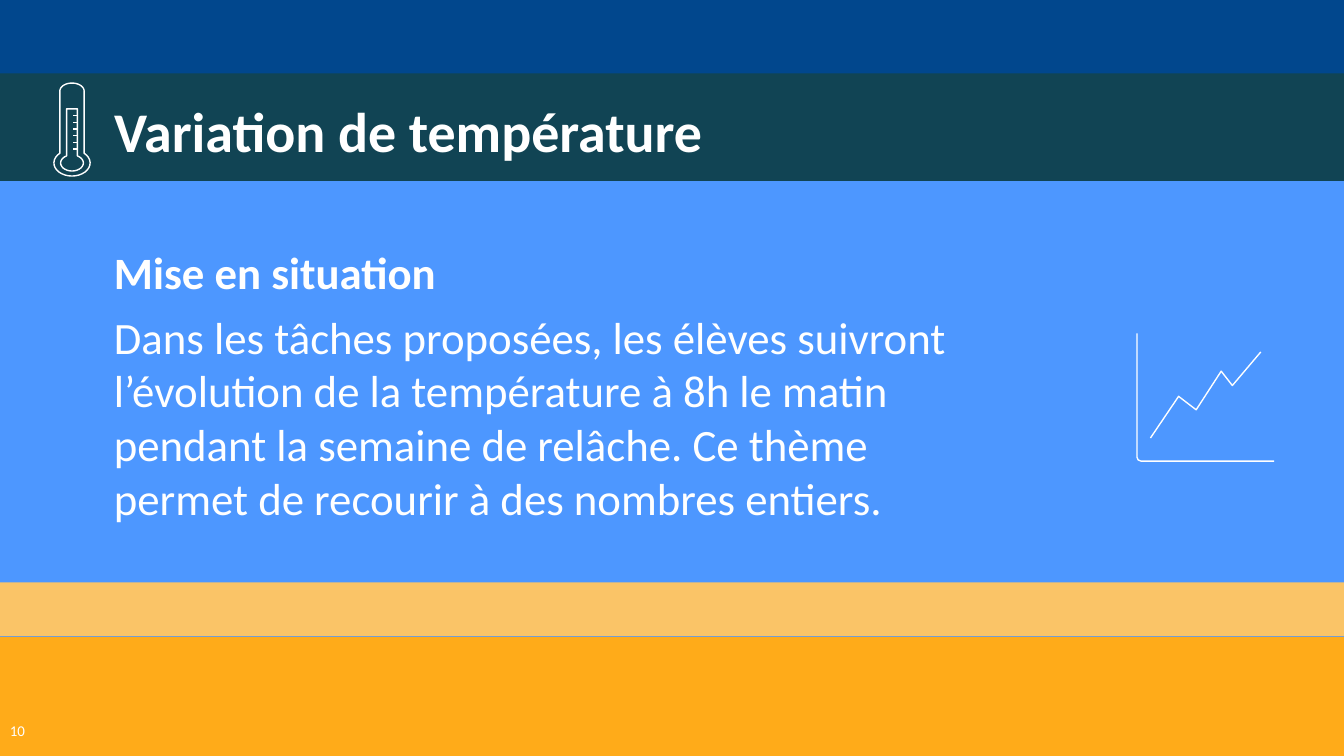
from math import acos, cos, pi, sin

from pptx import Presentation
from pptx.dml.color import RGBColor
from pptx.enum.shapes import MSO_CONNECTOR, MSO_SHAPE
from pptx.enum.text import MSO_ANCHOR as ANCHOR, MSO_AUTO_SIZE, PP_ALIGN as ALIGN
from pptx.oxml.ns import qn
from pptx.util import Pt

WIDTH, HEIGHT = 720, 405


def rgb(value):
    return RGBColor.from_string(value)


def arc(cx, cy, rx, ry, start, end, steps=24):
    """Points on an ellipse, from one angle to another, y pointing down."""
    angles = [start + (end - start) * i / steps for i in range(steps + 1)]
    return [(cx + rx * cos(a), cy + ry * sin(a)) for a in angles]


def bulb(cx, cy, rx, ry, half_neck):
    """Ellipse open at the top, running clockwise from the right of its neck."""
    neck = acos(half_neck / rx)
    return arc(cx, cy, rx, ry, -neck, pi + neck)


class SlideBuilder:
    font = "Calibri"
    ink = "FFFFFF"
    line_width = 0.75
    inset = 7.2

    def __init__(self, slide):
        self.slide = slide

    def background(self, color):
        fill = self.slide.background.fill
        fill.solid()
        fill.fore_color.rgb = rgb(color)

    def band(self, top, height, color):
        sp = self.slide.shapes.add_shape(
            MSO_SHAPE.RECTANGLE, 0, Pt(top), Pt(WIDTH), Pt(height))
        sp.shadow.inherit = False
        sp.fill.solid()
        sp.fill.fore_color.rgb = rgb(color)
        sp.line.fill.background()

    def fill_text(self, sp, paragraphs, size, anchor, align=ALIGN.LEFT, before=0):
        """Fill a shape with (text, bold) paragraphs."""
        tf = sp.text_frame
        frame = {"word_wrap": True, "auto_size": MSO_AUTO_SIZE.NONE,
                 "vertical_anchor": anchor}
        frame.update({f"margin_{side}": Pt(self.inset)
                      for side in ("left", "top", "right", "bottom")})
        for name, value in frame.items():
            setattr(tf, name, value)
        for i, (text, bold) in enumerate(paragraphs):
            p = tf.add_paragraph() if i else tf.paragraphs[0]
            p.alignment, p.space_before = align, Pt(before)
            r = p.add_run()
            r.text = text
            for name, value in {"name": self.font, "size": Pt(size), "bold": bold}.items():
                setattr(r.font, name, value)
            r.font.color.rgb = rgb(self.ink)

    def title(self, text, left, top, width, height, size):
        sp = self.slide.shapes.title
        sp.left, sp.top, sp.width, sp.height = map(Pt, (left, top, width, height))
        self.slide.shapes._spTree.append(sp._element)  # in front of the bands
        self.fill_text(sp, [(text, True)], size, ANCHOR.MIDDLE)

    def text(self, paragraphs, left, top, width, height, size, **layout):
        sp = self.slide.shapes.add_textbox(*map(Pt, (left, top, width, height)))
        self.fill_text(sp, paragraphs, size, **layout)

    def group(self):
        return self.slide.shapes.add_group_shape()

    def stroke(self, sp):
        sp.line.color.rgb = rgb(self.ink)
        sp.line.width = Pt(self.line_width)

    def outline(self, group, points, close=False):
        start, *rest = [(Pt(x), Pt(y)) for x, y in points]
        builder = group.shapes.build_freeform(*start)
        builder.add_line_segments(rest, close=close)
        sp = builder.convert_to_shape()
        sp.shadow.inherit = False
        sp.fill.background()
        self.stroke(sp)

    def line(self, group, x1, y1, x2, y2):
        sp = group.shapes.add_connector(
            MSO_CONNECTOR.STRAIGHT, *map(Pt, (x1, y1, x2, y2)))
        self.stroke(sp)
        sp._element.spPr.append(sp._element.makeelement(qn("a:effectLst"), {}))


def draw_chart_icon(b):
    icon = b.group()
    b.outline(icon, [(609.1, 178.6), (609.1, 245), (609.7, 246.4),
                     (611.2, 247), (682.6, 247)])
    b.outline(icon, [(616.3, 234.7), (631.4, 212.4), (640.8, 219.6),
                     (654.2, 198.9), (660.2, 206.6), (675.4, 188.6)])


def draw_thermometer_icon(b):
    icon = b.group()
    cx, bulb_y = 38.6, 87.3
    tube, column = 6.5, 2.9
    b.outline(icon, bulb(cx, bulb_y, 9.7, 7, tube)
              + arc(cx, 48.8, tube, 4.3, pi, 2 * pi), close=True)
    b.outline(icon, bulb(cx, bulb_y, 6.1, 4.3, column)
              + [(cx - column, 58.3), (cx + column, 58.3)], close=True)
    for i in range(6):
        y = 61.9 + 3.6 * i
        b.line(icon, cx + column, y, cx + 0.8, y)


def main():
    prs = Presentation()
    prs.slide_width, prs.slide_height = Pt(WIDTH), Pt(HEIGHT)
    b = SlideBuilder(prs.slides.add_slide(prs.slide_layouts[5]))

    b.background("4D97FF")
    for top, height, color in [(0, 41.8, "01478D"), (39.4, 57.6, "114454"),
                               (312, 28.8, "FAC467"), (341.2, 63.8, "FFAB19")]:
        b.band(top, height, color)

    b.title("Variation de température", 54, 39.6, 519, 59.8, 30)
    b.text([("Mise en situation", True),
            ("Dans les tâches proposées, les élèves suivront l’évolution de la "
             "température à 8h le matin pendant la semaine de relâche. Ce thème "
             "permet de recourir à des nombres entiers.", False)],
           54, 99.4, 488, 213, 24, anchor=ANCHOR.MIDDLE, before=6)
    b.text([("10", False)], -4.3, 379.4, 27.4, 25.2, 8,
           anchor=ANCHOR.TOP, align=ALIGN.CENTER)

    draw_chart_icon(b)
    draw_thermometer_icon(b)
    prs.save("out.pptx")


if __name__ == "__main__":
    main()
